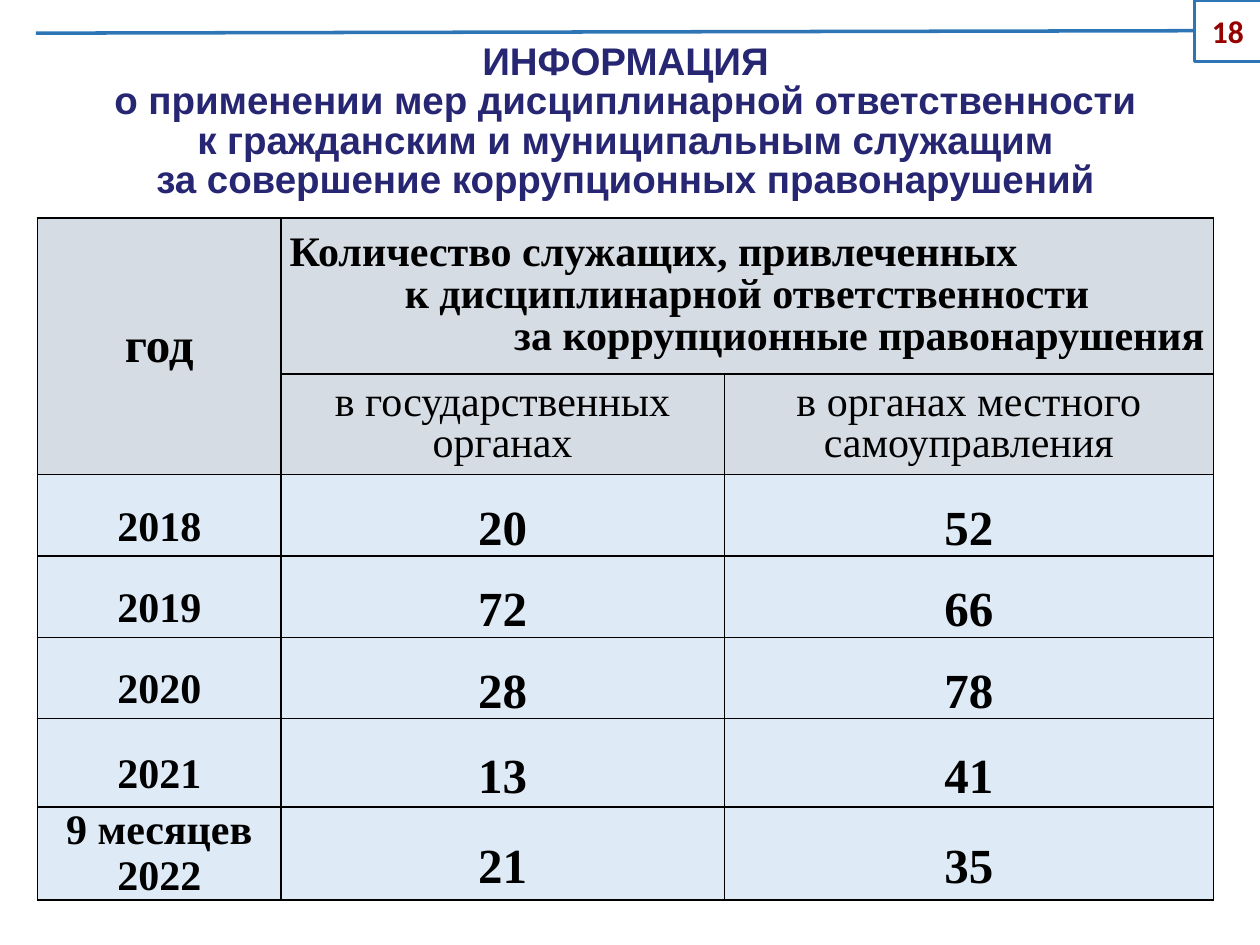
from lxml.etree import SubElement
from pptx import Presentation
from pptx.dml.color import RGBColor
from pptx.enum.shapes import MSO_SHAPE as Shape
from pptx.enum.text import MSO_ANCHOR as Anchor, MSO_AUTO_SIZE as AutoSize, PP_ALIGN as Align
from pptx.oxml.ns import qn
from pptx.util import Cm, Pt


def color(value):
    return RGBColor.from_string(value)


def format_text(frame, font, size, tint, bold=True, spacing=1.0):
    frame.vertical_anchor = Anchor.MIDDLE
    for para in frame.paragraphs:
        para.alignment = Align.CENTER
        para.line_spacing = spacing
        for span in para.runs:
            span.font.name = font
            span.font.size = Pt(size)
            span.font.bold = bold
            span.font.color.rgb = color(tint)


deck = Presentation()
deck.slide_width, deck.slide_height = Cm(25.4), Cm(19.05)
page = deck.slides.add_slide(deck.slide_layouts[5])

# Title
title = page.shapes.title
title.left, title.top, title.width, title.height = Cm(0.76), Cm(0.81), Cm(23.7), Cm(3.33)
title.text_frame.text = (
    "ИНФОРМАЦИЯ\n"
    "о применении мер дисциплинарной ответственности\n"
    "к гражданским и муниципальным служащим\n"
    "за совершение коррупционных правонарушений"
)
title.text_frame.auto_size = AutoSize.NONE
format_text(title.text_frame, "Arial", 22, "262673", spacing=0.85)

# Table grid
rows = [
    ["год", "Количество служащих, привлеченных\nк дисциплинарной ответственности\n"
            "за коррупционные правонарушения", ""],
    ["", "в государственных органах", "в органах местного самоуправления"],
    ["2018", "20", "52"],
    ["2019", "72", "66"],
    ["2020", "28", "78"],
    ["2021", "13", "41"],
    ["9 месяцев 2022", "21", "35"],
]
widths = [4.9, 8.94, 9.86]
heights = [3.15, 2.03, 1.64, 1.64, 1.64, 1.78, 1.87]
table = page.shapes.add_table(
    len(rows), len(widths), Cm(0.76), Cm(4.39), Cm(sum(widths)), Cm(sum(heights))
).table
for column, width in zip(table.columns, widths):
    column.width = Cm(width)
for row, height in zip(table.rows, heights):
    row.height = Cm(height)
table.cell(0, 0).merge(table.cell(1, 0))
table.cell(0, 1).merge(table.cell(0, 2))

# Cell text, borders and fills
for r, values in enumerate(rows):
    for c, value in enumerate(values):
        cell = table.cell(r, c)
        cell.margin_left = cell.margin_right = Cm(0.18)
        cell.margin_top = cell.margin_bottom = 0
        props = cell._tc.get_or_add_tcPr()
        for side in ("a:lnL", "a:lnR", "a:lnT", "a:lnB"):
            edge = SubElement(props, qn(side), w=str(Pt(1)))
            SubElement(SubElement(edge, qn("a:solidFill")), qn("a:srgbClr"), val="000000")
        cell.fill.solid()
        cell.fill.fore_color.rgb = color("D5DCE4" if r < 2 else "DEEAF6")
        if not value:
            continue
        cell.text_frame.text = value
        if r < 2:
            size, spacing = (28, 1.0) if c == 0 else (24, 0.9)
        else:
            size = 24 if c == 0 else 28
            spacing = 1.0 if value == "9 месяцев 2022" else 1.5
        format_text(cell.text_frame, "Times New Roman", size, "000000", r != 1, spacing)
        cell.vertical_anchor = Anchor.MIDDLE

# The heading steps from left to right
heading = table.cell(0, 1).text_frame.paragraphs
for para, align in zip(heading, (Align.LEFT, Align.CENTER, Align.RIGHT)):
    para.alignment = align
heading[-1].space_after = Pt(6)

# Page number with its long callout line
number = page.shapes.add_shape(Shape.LINE_CALLOUT_1, Cm(24.08), 0, Cm(1.35), Cm(1.24))
for i, value in enumerate((0.5, -0.01, 0.54, -17.3)):
    number.adjustments[i] = value
number.shadow.inherit = False
number.fill.background()
number.line.color.rgb = color("2E75B6")
number.line.width = Pt(2)
number.text_frame.text = "18"
format_text(number.text_frame, "Calibri", 18, "960000")

deck.save("out.pptx")
